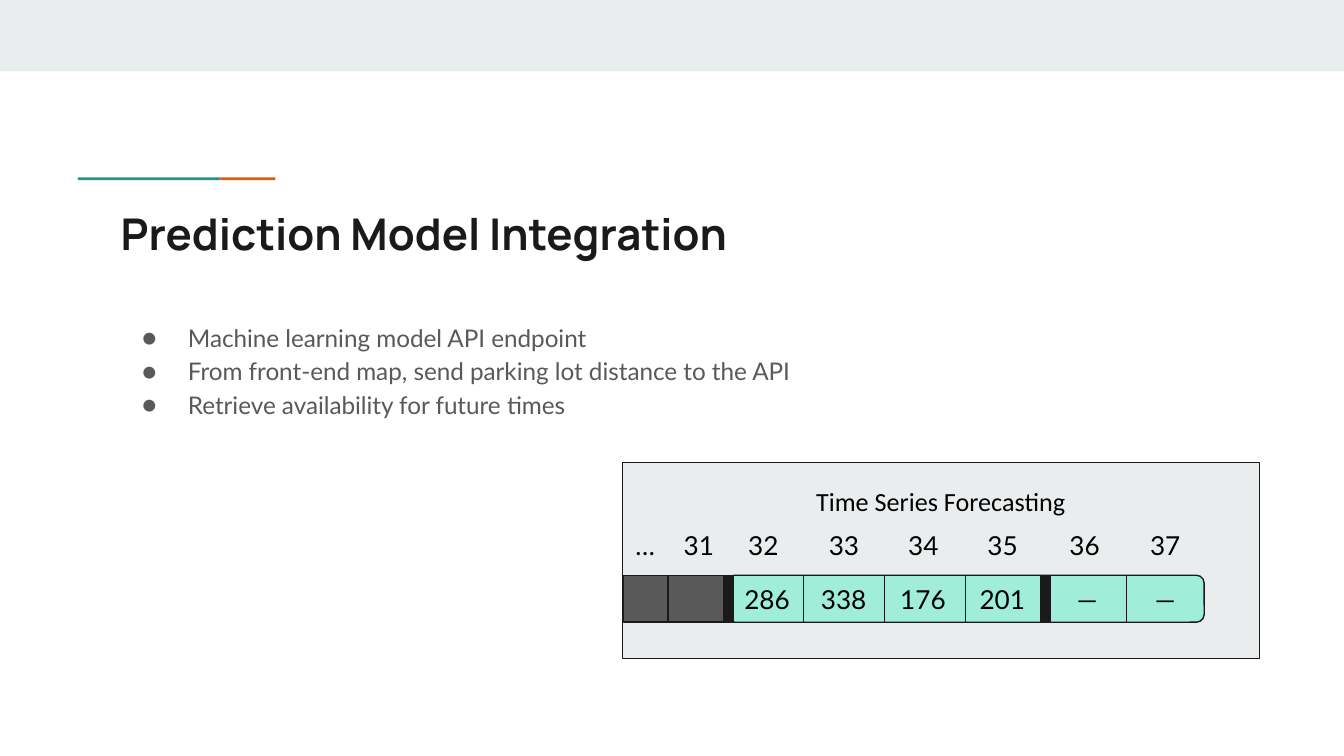
import pptx
import pptx.util
import pptx.dml.color
import pptx.enum.shapes
import pptx.enum.text
import pptx.oxml.ns
import lxml.etree

Inches = pptx.util.Inches
Pt = pptx.util.Pt
Shape = pptx.enum.shapes.MSO_SHAPE
Align = pptx.enum.text.PP_ALIGN

# Content
TITLE = "Prediction Model Integration"
POINTS = [
    "Machine learning model API endpoint",
    "From front-end map, send parking lot distance to the API",
    "Retrieve availability for future times",
]
CHART = "Time Series Forecasting"
# Each label with its centre
HOURS = [("…", 4.8), ("31", 5.2), ("32", 5.68), ("33", 6.28),
         ("34", 6.87), ("35", 7.46), ("36", 8.07), ("37", 8.67)]
VALUES = [("286", 5.71), ("338", 6.28), ("176", 6.87),
          ("201", 7.46), ("—", 8.09), ("—", 8.67)]

THEME = {
    "ink": "1A1A1A", "black": "000000", "grey": "595959", "pale": "E9EDEE",
    "mint": "9FEDDA", "teal": "1A9988", "orange": "EB5600",
    "head": ("Manrope", 23.4), "body": ("Lato", 13),
    "cell": ("Lato", 14), "name": ("Calibri", 14),
    "thin": 0.75, "thick": 6,
}

# Layout
WIDTH = 10
HEIGHT = WIDTH * 9 / 16
TOP, HIGH = 4.28, 0.35
BAR = (5.41, TOP, 3.55, HIGH)
EDGE, GAP = 5.98, 0.6         # slot dividers
WIDE, TALL = 0.54, 0.44       # label boxes
HOUR_Y, VALUE_Y = 3.84, 4.24


def tint(key):
    return pptx.dml.color.RGBColor.from_string(THEME[key])


def add_box(slide, box, fill, edge=False, kind=Shape.RECTANGLE):
    shape = slide.shapes.add_shape(kind, *map(Inches, box))
    shape.shadow.inherit = False
    shape.fill.solid()
    shape.fill.fore_color.rgb = tint(fill)
    if edge:
        shape.line.color.rgb = tint("ink")
        shape.line.width = Pt(THEME["thin"])
    else:
        shape.line.fill.background()
    return shape


def add_text(slide, box, text, style, color, align=Align.LEFT, bold=False):
    frame = slide.shapes.add_textbox(*map(Inches, box)).text_frame
    frame.word_wrap = True
    frame.margin_left = frame.margin_right = Inches(0.1)
    frame.margin_top = frame.margin_bottom = Inches(0.1)
    frame.text = text
    face, size = THEME[style]
    for para in frame.paragraphs:
        para.alignment = align
        for run in para.runs:
            run.font.name = face
            run.font.size = Pt(size)
            run.font.bold = bold
            run.font.color.rgb = tint(color)
    return frame


def add_label(slide, mid, top, text):
    align = Align.LEFT if len(text) == 3 else Align.CENTER
    add_text(slide, (mid - WIDE / 2, top, WIDE, TALL), text,
             "cell", "black", align)


def add_rule(slide, x, weight):
    line = slide.shapes.add_connector(
        pptx.enum.shapes.MSO_CONNECTOR.STRAIGHT,
        Inches(x), Inches(TOP), Inches(x), Inches(TOP + HIGH))
    line.line.color.rgb = tint("ink")
    line.line.width = Pt(THEME[weight])
    lxml.etree.SubElement(line._element.spPr,
                          pptx.oxml.ns.qn("a:effectLst"))
    return line


def add_part(base, tag, **attrs):
    return lxml.etree.SubElement(base, pptx.oxml.ns.qn(tag), **attrs)


def add_bullet(para):
    face, size = THEME["body"]
    props = para._p.get_or_add_pPr()
    props.set("marL", str(Inches(0.5)))
    props.set("indent", str(Inches(-0.34)))
    para.line_spacing = 1.15
    color = add_part(props, "a:buClr")
    add_part(color, "a:srgbClr", val=THEME["grey"])
    add_part(props, "a:buSzPts", val=str(size * 100))
    add_part(props, "a:buFont", typeface=face)
    add_part(props, "a:buChar", char="●")


def main():
    deck = pptx.Presentation()
    deck.slide_width, deck.slide_height = Inches(WIDTH), Inches(HEIGHT)
    slide = deck.slides.add_slide(deck.slide_layouts[6])

    # Top band and accent
    add_box(slide, (0, 0, WIDTH, 0.53), "pale")
    add_box(slide, (0.58, 1.32, 1.06, 0.02), "teal")
    add_box(slide, (1.64, 1.32, 0.41, 0.02), "orange")

    # Panel and past bar
    add_box(slide, (4.63, 3.44, 4.74, 1.46), "pale", edge=True)
    add_box(slide, (4.64, TOP, 1.27, HIGH), "grey", edge=True)

    # Title and bullets
    add_text(slide, (0.8, 1.44, 8.41, 0.59), TITLE, "head", "ink", bold=True)
    points = add_text(slide, (0.8, 2.27, 5.31, 0.92), "\n".join(POINTS),
                      "body", "grey")
    for para in points.paragraphs:
        add_bullet(para)

    # Series name and bar
    add_text(slide, (5.84, 3.51, 2.32, 0.29), CHART, "name", "black",
             Align.CENTER)
    bar = add_box(slide, BAR, "mint", True, Shape.ROUNDED_RECTANGLE)
    bar.adjustments[0] = 0.167

    # Dividers: thick ones frame the known values
    rules = [add_rule(slide, EDGE + i * GAP, "thick" if i == 3 else "thin")
             for i in range(len(VALUES) - 1)]
    rules[2].begin_connect(bar, 0)
    rules[2].end_connect(bar, 2)
    add_rule(slide, 5.42, "thick")
    add_rule(slide, 4.97, "thin")

    # Hours and values
    for top, row in ((VALUE_Y, VALUES), (HOUR_Y, HOURS)):
        for text, mid in row:
            add_label(slide, mid, top, text)

    deck.save("out.pptx")


if __name__ == "__main__":
    main()
